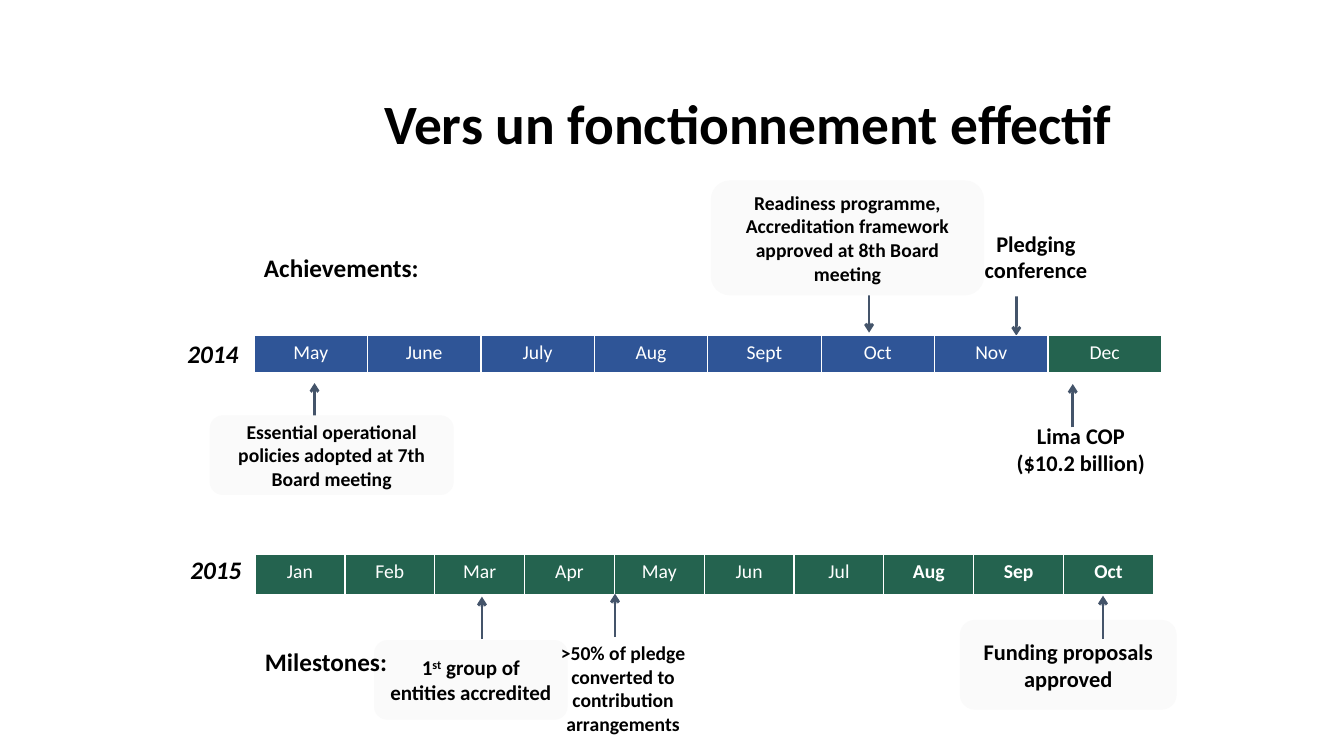
from dataclasses import dataclass

from lxml.etree import SubElement
from pptx import Presentation
from pptx.dml.color import RGBColor
from pptx.enum.shapes import MSO_CONNECTOR, MSO_SHAPE
from pptx.enum.text import MSO_ANCHOR, MSO_AUTO_SIZE, PP_ALIGN
from pptx.oxml.ns import qn
from pptx.util import Inches, Pt

BLACK = RGBColor(0x00, 0x00, 0x00)
WHITE = RGBColor(0xFF, 0xFF, 0xFF)
PALE = RGBColor(0xFA, 0xFA, 0xFA)
BLUE = RGBColor(0x2F, 0x55, 0x97)
GREEN = RGBColor(0x24, 0x63, 0x4F)
SLATE = RGBColor(0x44, 0x54, 0x6A)
FONT = "Calibri"
BORDERS = {"a:lnL": 1, "a:lnR": 1, "a:lnT": 1, "a:lnB": 3}


@dataclass
class Box:
    left: float
    top: float
    width: float
    height: float

    def inside(self, left, top, width, height):
        return Box(self.left + left, self.top + top, width, height)

    def lengths(self):
        return [Inches(v) for v in (self.left, self.top, self.width, self.height)]


def add_run(paragraph, text, size, color=BLACK, bold=True, italic=False):
    run = paragraph.add_run()
    run.text = text
    font = run.font
    font.name, font.size, font.bold, font.italic = FONT, Pt(size), bold, italic
    font.color.rgb = color
    return run


def add_heading(slide, box, text):
    title = slide.shapes.title
    title.left, title.top, title.width, title.height = box.lengths()
    frame = title.text_frame
    frame.auto_size = MSO_AUTO_SIZE.NONE
    frame.word_wrap = True
    frame.vertical_anchor = MSO_ANCHOR.MIDDLE
    paragraph = frame.paragraphs[0]
    paragraph.alignment = PP_ALIGN.LEFT
    paragraph.line_spacing = 0.9
    add_run(paragraph, text, 39.6)


def add_label(slide, box, text, italic=False):
    label = slide.shapes.add_textbox(*box.lengths())
    label.text_frame.word_wrap = italic
    label.text_frame.auto_size = MSO_AUTO_SIZE.SHAPE_TO_FIT_TEXT
    add_run(label.text_frame.paragraphs[0], text, 18, italic=italic)


def add_callout(slide, box, paragraphs, size, fill):
    callout = slide.shapes.add_shape(MSO_SHAPE.ROUNDED_RECTANGLE, *box.lengths())
    callout.shadow.inherit = False
    callout.line.fill.background()
    if fill is None:
        callout.fill.background()
    else:
        callout.fill.solid()
        callout.fill.fore_color.rgb = fill
    frame = callout.text_frame
    frame.word_wrap = True
    frame.vertical_anchor = MSO_ANCHOR.MIDDLE
    for index, pieces in enumerate(paragraphs):
        paragraph = frame.add_paragraph() if index else frame.paragraphs[0]
        paragraph.alignment = PP_ALIGN.CENTER
        for piece in pieces:
            run = add_run(paragraph, piece, size)
            if piece == "st":
                run.font._element.set("baseline", "30000")


def add_arrow(slide, box, x, start, end):
    x = Inches(box.left + x)
    arrow = slide.shapes.add_connector(
        MSO_CONNECTOR.STRAIGHT, x, Inches(box.top + start), x, Inches(box.top + end))
    arrow.line.color.rgb = SLATE
    arrow.line.width = Pt(2)
    SubElement(arrow.line._get_or_add_ln(), qn("a:tailEnd"), type="arrow")
    SubElement(arrow._element.spPr, qn("a:effectLst"))


def add_months(slide, box, months):
    table = slide.shapes.add_table(1, len(months), *box.lengths()).table
    table.first_row = table.horz_banding = False
    table.rows[0].height = Inches(box.height)
    for index, (month, color, bold) in enumerate(months):
        table.columns[index].width = Inches(box.width / len(months))
        cell = table.cell(0, index)
        properties = cell._tc.get_or_add_tcPr()
        for side, width in BORDERS.items():
            border = SubElement(properties, qn(side), w=str(Pt(width)))
            fill = SubElement(border, qn("a:solidFill"))
            SubElement(fill, qn("a:srgbClr"), val=str(WHITE))
        cell.fill.solid()
        cell.fill.fore_color.rgb = color
        paragraph = cell.text_frame.paragraphs[0]
        paragraph.alignment = PP_ALIGN.CENTER
        add_run(paragraph, month, 14, WHITE, bold)


def add_achievements(slide, box):
    for x, start, end in [(7.56, -0.49, 0), (6.1, -0.49, -0.03),
                          (0.6, 0.9, 0.47), (8.12, 0.91, 0.48)]:
        add_arrow(slide, box, x, start, end)
    months = ["May", "June", "July", "Aug", "Sept", "Oct", "Nov"]
    add_months(slide, box, [(m, BLUE, False) for m in months] + [("Dec", GREEN, False)])
    add_callout(slide, box.inside(7.42, 0.76, 1.56, 0.73),
                [["Lima COP"], ["($10.2 billion)"]], 16, None)
    add_callout(slide, box.inside(6.93, -1.18, 1.65, 0.79),
                [["Pledging conference"]], 16, WHITE)
    add_callout(slide, box.inside(-0.44, 0.79, 2.42, 0.79),
                [["Essential operational policies adopted at 7th Board meeting"]], 14, PALE)
    add_callout(slide, box.inside(4.53, -1.54, 2.71, 1.14),
                [["Readiness programme,"],
                 ["Accreditation framework approved at 8th Board meeting"]], 14, PALE)
    add_label(slide, box.inside(-0.76, -0.02, 1.35, 0.4), "2014", italic=True)
    add_label(slide, box.inside(0, -0.88, 1.83, 0.4), "Achievements:")


def add_milestones(slide, box):
    add_callout(slide, box.inside(1.18, 0.85, 1.92, 0.79),
                [["1", "st", " group of entities accredited"]], 15, PALE)
    add_callout(slide, box.inside(6.99, 0.65, 2.15, 0.89),
                [["Funding proposals approved"]], 16, PALE)
    add_callout(slide, box.inside(2.69, 0.93, 1.92, 0.79),
                [[">50% of pledge converted to contribution arrangements"]], 14, None)
    months = ["Jan", "Feb", "Mar", "Apr", "May", "Jun", "Jul", "Aug", "Sep", "Oct"]
    add_months(slide, box, [(m, GREEN, i >= 7) for i, m in enumerate(months)])
    for x, start, end in [(8.41, 0.84, 0.41), (2.25, 0.84, 0.42), (3.57, 0.82, 0.39)]:
        add_arrow(slide, box, x, start, end)
    add_label(slide, box.inside(-0.74, -0.05, 1.35, 0.4), "2015", italic=True)
    add_label(slide, box.inside(0, 0.86, 1.46, 0.4), "Milestones:")


def main():
    presentation = Presentation()
    presentation.slide_width = Inches(13.33)
    presentation.slide_height = Inches(7.5)
    slide = presentation.slides.add_slide(presentation.slide_layouts[5])
    add_heading(slide, Box(3.71, 0.63, 8, 1.25), "Vers un fonctionnement effectif")
    add_achievements(slide, Box(2.52, 3.33, 9, 0.38))
    add_milestones(slide, Box(2.53, 5.5, 8.91, 0.41))
    presentation.save("out.pptx")


if __name__ == "__main__":
    main()
